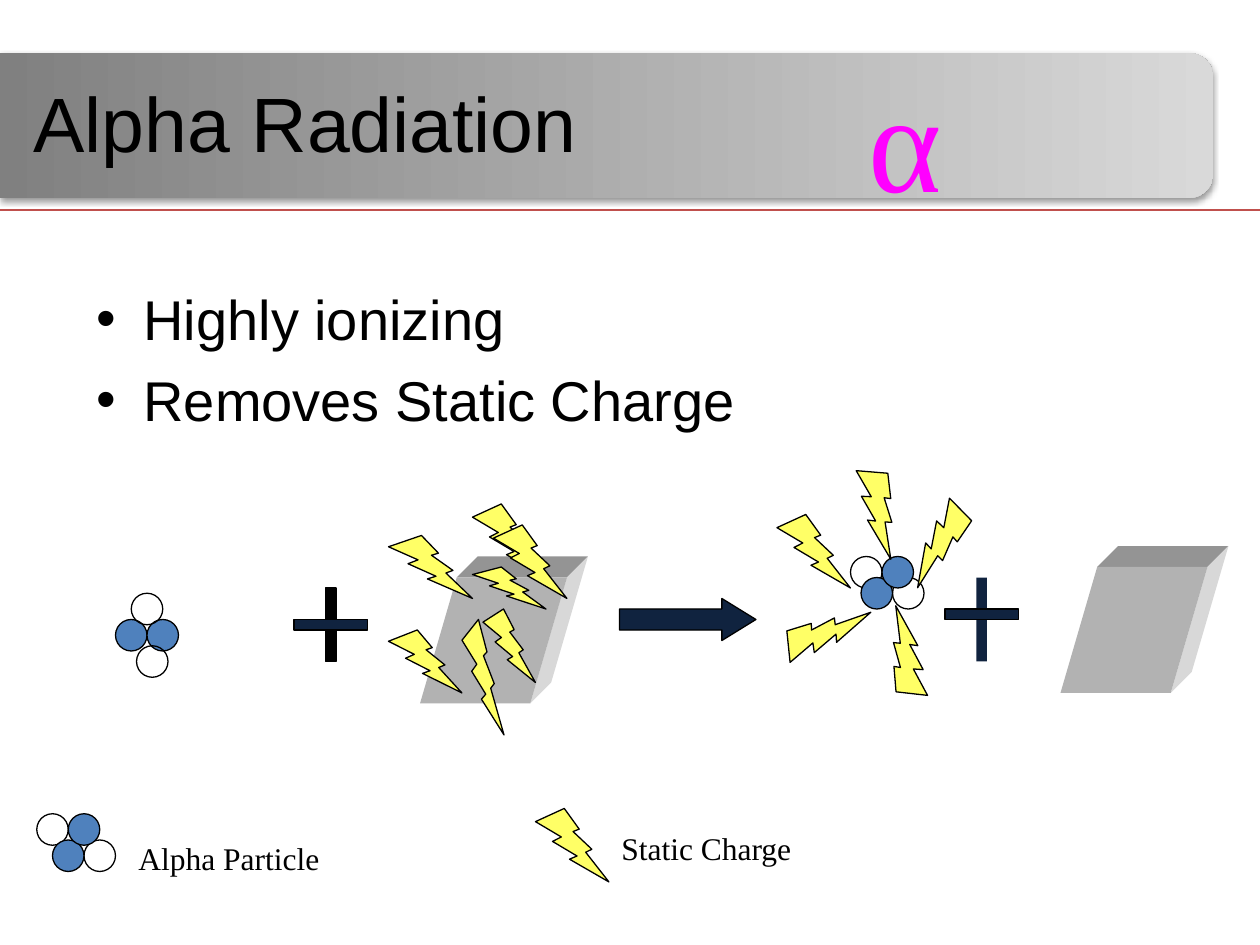
from dataclasses import dataclass
from typing import Optional

from lxml.etree import SubElement
from pptx import Presentation
from pptx.dml.color import RGBColor
from pptx.enum.shapes import MSO_CONNECTOR, MSO_SHAPE as Preset
from pptx.oxml.ns import qn
from pptx.util import Cm, Pt

BLACK = RGBColor(0x00, 0x00, 0x00)
BLUE = RGBColor(0x4F, 0x81, 0xBD)
NAVY = RGBColor(0x10, 0x23, 0x3F)
YELLOW = RGBColor(0xFF, 0xFF, 0x66)
MAGENTA = RGBColor(0xFF, 0x00, 0xFF)
RED = RGBColor(0xC0, 0x50, 0x4D)
BANNER_DARK = RGBColor(0x80, 0x80, 0x80)
BANNER_LIGHT = RGBColor(0xD9, 0xD9, 0xD9)
FRONT_GRAY = RGBColor(0xB2, 0xB2, 0xB2)
TOP_GRAY = RGBColor(0x94, 0x94, 0x94)
SIDE_GRAY = RGBColor(0xD8, 0xD8, 0xD8)
SANS, SERIF = "Arial", "Times New Roman"
BALL = 3


@dataclass
class Ball:
    left: float
    top: float
    fill: Optional[RGBColor] = None


@dataclass
class Bolt:
    left: float
    top: float
    width: float = 7
    height: float = 7
    rotation: float = 0


@dataclass
class Label:
    lines: list[str]
    left: float
    top: float
    width: float
    height: float
    font: str
    size: float
    color: RGBColor = BLACK
    inset: float = 0.13
    bullets: bool = False


BLOCK_PARTICLE = [Ball(11, 59, BLUE), Ball(14, 59, BLUE), Ball(13, 61.5), Ball(12.5, 56.5)]
CHARGED_PARTICLE = [Ball(81, 53), Ball(85, 55), Ball(82, 55, BLUE), Ball(84, 53, BLUE)]
LEGEND_PARTICLE = [Ball(3.5, 77.5), Ball(8, 80), Ball(5, 80, BLUE), Ball(6.5, 77.5, BLUE)]
BLOCK_BOLTS = [Bolt(37, 51, 8, 6), Bolt(45, 54, 7, 4), Bolt(44, 59, 4, 11),
               Bolt(37, 60, 7, 6), Bolt(46, 58, 5, 7), Bolt(45, 48), Bolt(47, 50)]
PARTICLE_BOLTS = [Bolt(83, 59, rotation=211.1), Bolt(75, 57, rotation=288.8),
                  Bolt(80, 45, rotation=29.3), Bolt(74, 49), Bolt(86, 48, rotation=70.2)]
LEGEND_BOLTS = [Bolt(51, 77)]
LABELS = [
    Label(["Alpha Radiation"], 2, 5.9, 102, 15, SANS, 44, inset=0.28),
    Label(["Highly ionizing", "Removes Static Charge"], 8, 26, 102, 19, SANS, 32,
          inset=0.24, bullets=True),
    Label(["Static Charge"], 58, 78, 32, 6, SERIF, 18, inset=0.2),
    Label(["Alpha Particle"], 12, 79, 34, 6, SERIF, 18, inset=0.2),
    Label(["α"], 81.5, 2.9, 9, 17.2, SERIF, 80, MAGENTA, inset=0.45),
]


def grid(steps: float) -> Cm:
    """Length on a grid of 120 steps across the slide."""
    return Cm(steps * 25.4 / 120)


def paint(shape, fill: Optional[RGBColor], line: Optional[RGBColor]) -> None:
    shape.shadow.inherit = False
    if fill is None:
        shape.fill.background()
    else:
        shape.fill.solid()
        shape.fill.fore_color.rgb = fill
    if line is None:
        shape.line.fill.background()
    else:
        shape.line.color.rgb = line
        shape.line.width = Pt(0.75)


def draw_preset(page, preset, left: float, top: float, width: float, height: float,
                fill: Optional[RGBColor], line: Optional[RGBColor] = BLACK):
    shape = page.shapes.add_shape(preset, grid(left), grid(top), grid(width), grid(height))
    paint(shape, fill, line)
    return shape


def draw_balls(page, balls: list[Ball]) -> None:
    for ball in balls:
        draw_preset(page, Preset.OVAL, ball.left, ball.top, BALL, BALL, ball.fill)


def draw_bolts(page, bolts: list[Bolt]) -> None:
    for bolt in bolts:
        shape = draw_preset(page, Preset.LIGHTNING_BOLT, bolt.left, bolt.top,
                            bolt.width, bolt.height, YELLOW)
        shape.rotation = bolt.rotation


def draw_face(page, corners: list[tuple[float, float]], fill: RGBColor) -> None:
    points = [(grid(x), grid(y)) for x, y in corners]
    builder = page.shapes.build_freeform(*points[0], scale=1.0)
    builder.add_line_segments(points[1:], close=True)
    paint(builder.convert_to_shape(), fill, None)


def draw_block(page, left: float, top: float) -> None:
    """Slanted block with a front, a top and a right side."""
    width, height, slant, depth = 14, 12, 3.5, 2
    right, bottom = left + width, top + height
    draw_face(page, [(left + slant, top), (right, top), (right + depth, top - depth),
                     (left + slant + depth, top - depth)], TOP_GRAY)
    draw_face(page, [(right, top), (right + depth, top - depth),
                     (right - slant + depth, bottom - depth), (right - slant, bottom)], SIDE_GRAY)
    front = draw_preset(page, Preset.PARALLELOGRAM, left, top, width, height, FRONT_GRAY, None)
    front.adjustments[0] = slant / height


def draw_banner(page) -> None:
    banner = page.shapes.add_shape(Preset.ROUND_2_SAME_RECTANGLE,
                                   Cm(10.77), Cm(-9.7), Cm(2.92), Cm(24.46))
    banner.rotation = 90
    paint(banner, None, None)
    banner.fill.gradient()
    banner.fill.gradient_angle = 90
    for stop, color in zip(banner.fill.gradient_stops, (BANNER_DARK, BANNER_LIGHT)):
        stop.color.rgb = color
    effects = banner.element.spPr.find(qn("a:effectLst"))
    shadow = SubElement(effects, qn("a:outerShdw"), blurRad="40000", dist="20000",
                        dir="5400000", rotWithShape="0")
    color = SubElement(shadow, qn("a:srgbClr"), val=str(BLACK))
    SubElement(color, qn("a:alpha"), val="38000")


def draw_rule(page) -> None:
    rule = page.shapes.add_connector(MSO_CONNECTOR.STRAIGHT, 0, grid(20), grid(120), grid(20))
    rule.line.color.rgb = RED
    rule.line.width = Pt(0.75)
    SubElement(rule.element.spPr, qn("a:effectLst"))


def add_bullet(para) -> None:
    properties = para._p.get_or_add_pPr()
    properties.set("marL", str(Cm(0.95)))
    properties.set("indent", str(Cm(-0.95)))
    SubElement(properties, qn("a:buFont"), typeface=SANS)
    SubElement(properties, qn("a:buChar"), char="•")


def write_label(page, label: Label) -> None:
    box = page.shapes.add_textbox(grid(label.left), grid(label.top),
                                  grid(label.width), grid(label.height))
    frame = box.text_frame
    frame.word_wrap = True
    frame.margin_top = Cm(label.inset)
    frame.text = "\n".join(label.lines)
    for index, para in enumerate(frame.paragraphs):
        if label.bullets:
            add_bullet(para)
        if index:
            para.space_before = Pt(7.4)
        for span in para.runs:
            span.font.name = label.font
            span.font.size = Pt(label.size)
            span.font.color.rgb = label.color


def main() -> None:
    deck = Presentation()
    deck.slide_width, deck.slide_height = Cm(25.4), Cm(19.05)
    page = deck.slides.add_slide(deck.slide_layouts[6])
    draw_banner(page)
    draw_rule(page)
    draw_balls(page, BLOCK_PARTICLE)
    draw_preset(page, Preset.RECTANGLE, 31, 56, 1, 7, BLACK)
    draw_preset(page, Preset.RECTANGLE, 28, 59, 7, 1, NAVY)
    draw_block(page, 40, 55)
    draw_bolts(page, BLOCK_BOLTS)
    arrow = draw_preset(page, Preset.RIGHT_ARROW, 59, 57, 13, 4, NAVY)
    arrow.adjustments[1] = 0.81
    draw_balls(page, CHARGED_PARTICLE)
    draw_block(page, 101, 54)
    draw_bolts(page, PARTICLE_BOLTS + LEGEND_BOLTS)
    draw_balls(page, LEGEND_PARTICLE)
    for label in LABELS:
        write_label(page, label)
    draw_preset(page, Preset.RECTANGLE, 93, 55, 1, 8, NAVY, None)
    draw_preset(page, Preset.RECTANGLE, 90, 58, 7, 1, NAVY)
    deck.save("out.pptx")


if __name__ == "__main__":
    main()
